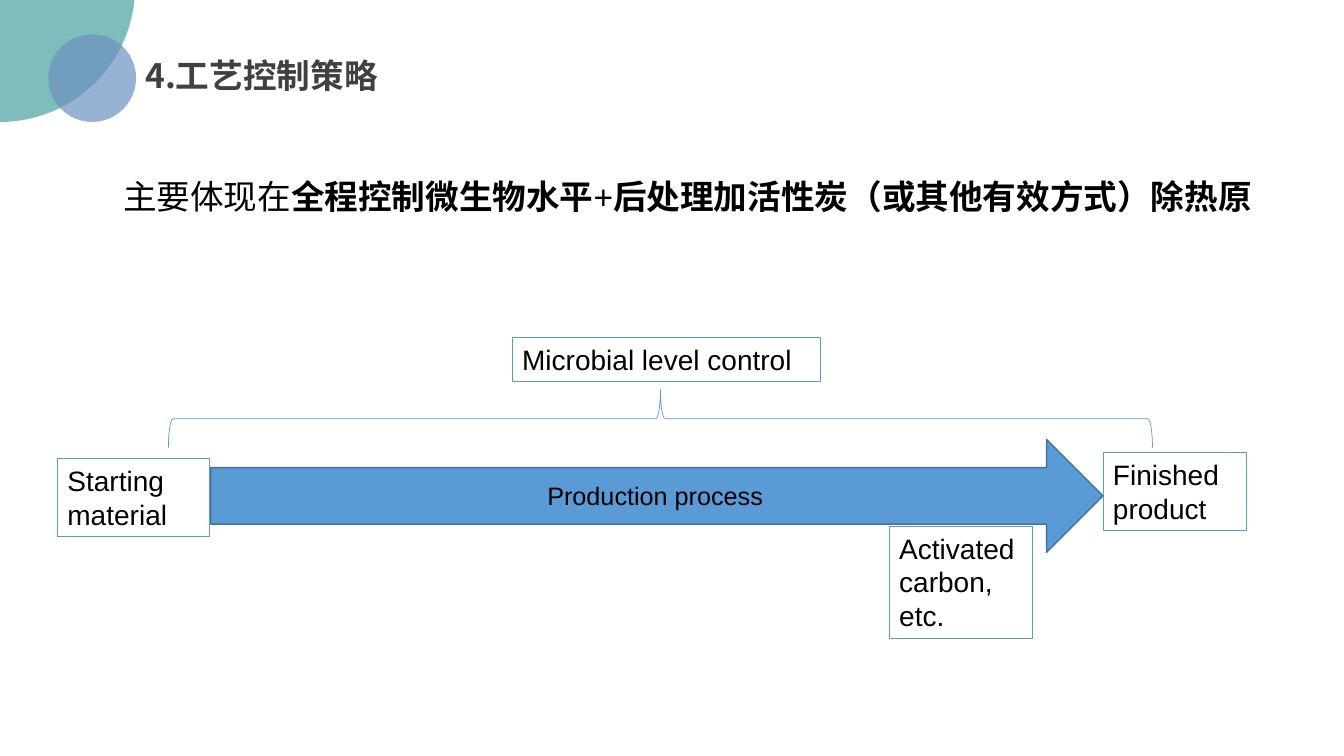
from lxml import etree
from pptx import Presentation
from pptx.dml.color import RGBColor
from pptx.enum.shapes import MSO_SHAPE
from pptx.enum.text import MSO_ANCHOR, MSO_AUTO_SIZE, PP_ALIGN
from pptx.oxml.ns import qn
from pptx.util import Inches, Pt

ELLIPSE, RECT = MSO_SHAPE.OVAL, MSO_SHAPE.RECTANGLE
ARROW, BRACE = MSO_SHAPE.RIGHT_ARROW, MSO_SHAPE.LEFT_BRACE
TOP, LEFT, NO_FIT = MSO_ANCHOR.TOP, PP_ALIGN.LEFT, MSO_AUTO_SIZE.NONE

COLORS = {"teal": "48A2A0", "slate": "6C92C0", "arrow": "5B9BD5",
          "arrow_edge": "43739E", "title": "404040", "text": "000000"}
LATIN, CJK = "Arial", "Noto Sans CJK SC"

# Runs are (text, bold); boxes are (left, top, width, height)
TITLE = [("4.工艺控制策略", True)]
TITLE_BOX = (1.34, 0.49, 6.59, 0.5)
SUMMARY = [("主要体现在", False), ("全程控制微生物水平", True), ("+", False),
           ("后处理加活性炭（或其他有效方式）除热原", True)]
SUMMARY_BOX = (1.12, 1.69, 11.7, 0.5)
CIRCLES = [((-1.34, -1.47, 2.68, 2.68), "teal"), ((0.48, 0.34, 0.87, 0.87), "slate")]
CIRCLE_OPACITY = 70
ARROW_BOX = (2.09, 4.36, 8.85, 1.12)
PROCESS = "Production process"
PROCESS_BOX = (5.33, 4.72, 2.36, 0.4)
BRACE_SPAN = (1.67, 3.87, 9.76, 0.57)
LABELS = [("Starting material", (0.57, 4.55, 1.51, 0.77)),
          ("Finished product", (10.94, 4.49, 1.42, 0.77)),
          ("Microbial level control", (5.08, 3.35, 3.06, 0.44)),
          ("Activated carbon, etc.", (8.82, 5.22, 1.42, 1.11))]


def color(name):
    return RGBColor.from_string(COLORS[name])


def place(sp, box):
    sp.left, sp.top, sp.width, sp.height = map(Inches, box)


def write(sp, runs, size, font=LATIN, ink="text", wrap=True):
    tf = sp.text_frame
    tf.word_wrap, tf.auto_size, tf.vertical_anchor = wrap, NO_FIT, TOP
    p = tf.paragraphs[0]
    p.alignment, p.line_spacing, p.space_before = LEFT, 1.0, Pt(0)
    for text, bold in runs:
        r = p.add_run()
        r.text = text
        r.font.size, r.font.bold, r.font.name = Pt(size), bold, font
        r.font.color.rgb = color(ink)
        etree.SubElement(r.font._element, qn("a:ea")).set("typeface", CJK)
    return p


def add_shape(kind, box, fill=None, line=None, weight=0.75):
    sp = slide.shapes.add_shape(kind, *map(Inches, box))
    sp.shadow.inherit = False
    if fill:
        sp.fill.solid()
        sp.fill.fore_color.rgb = color(fill)
    else:
        sp.fill.background()
    if line:
        sp.line.color.rgb = color(line)
        sp.line.width = Pt(weight)
    else:
        sp.line.fill.background()
    return sp


prs = Presentation()
prs.slide_width, prs.slide_height = Inches(13.33), Inches(7.5)
slide = prs.slides.add_slide(prs.slide_layouts[1])

title, body = slide.placeholders
place(title, TITLE_BOX)
write(title, TITLE, 24, CJK, "title")
place(body, SUMMARY_BOX)
p = write(body, SUMMARY, 24)
pPr = p._p.get_or_add_pPr()
pPr.set("marL", "0")
pPr.set("indent", "0")
etree.SubElement(pPr, qn("a:buNone"))

for box, fill in CIRCLES:
    sp = add_shape(ELLIPSE, box, fill)
    rgb = sp.fill._xPr.find(f".//{qn('a:srgbClr')}")
    etree.SubElement(rgb, qn("a:alpha")).set("val", str(CIRCLE_OPACITY * 1000))

add_shape(ARROW, ARROW_BOX, "arrow", "arrow_edge", 1)

# The brace stands upright, then turns about its centre to cover the span
left, top, width, height = BRACE_SPAN
shift = (width - height) / 2
brace = add_shape(BRACE, (left + shift, top - shift, height, width), line="arrow", weight=0.5)
brace.rotation = 90

for text, box in LABELS:
    write(add_shape(RECT, box, line="arrow"), [(text, False)], 20)

process = slide.shapes.add_textbox(*map(Inches, PROCESS_BOX))
write(process, [(PROCESS, False)], 18, wrap=False)

prs.save("out.pptx")
